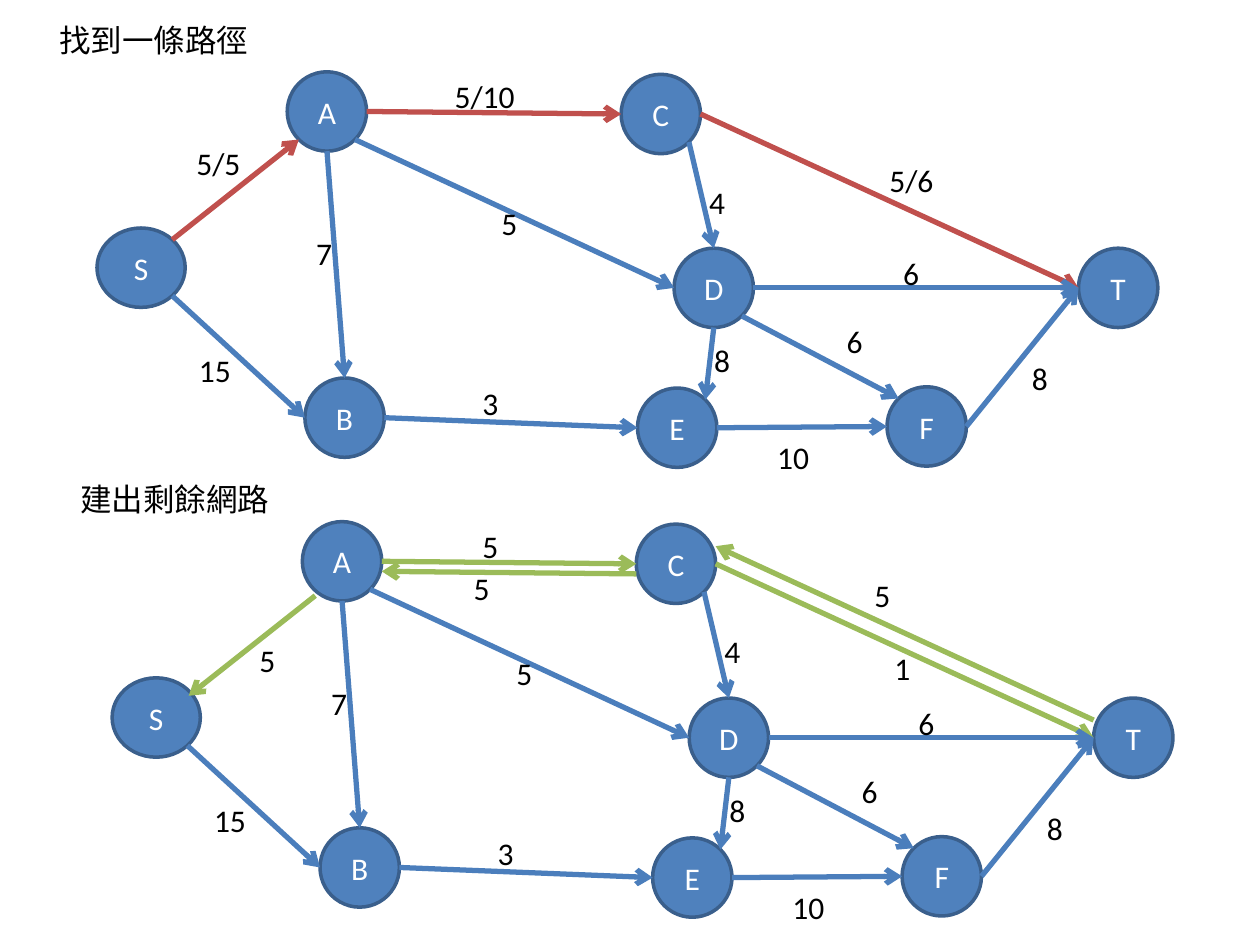
from math import sqrt
from typing import NamedTuple

from lxml.etree import SubElement
from pptx import Presentation
from pptx.dml.color import RGBColor
from pptx.enum.shapes import MSO_CONNECTOR as Connector, MSO_SHAPE as Shape
from pptx.enum.text import MSO_ANCHOR as Anchor, MSO_AUTO_SIZE as AutoSize, PP_ALIGN as Align
from pptx.oxml.ns import qn
from pptx.util import Inches, Pt

BLUE, RED, GREEN = "4B7EBC", "C0504D", "9BBB59"
LATIN, CHINESE = "Calibri", "Noto Sans CJK SC"
NODE_SIZE = 0.63
DIAGONAL = sqrt(0.5)
SIDES = {
    "top": (0, -1), "bottom": (0, 1), "left": (-1, 0), "right": (1, 0),
    "top right": (DIAGONAL, -DIAGONAL), "top left": (-DIAGONAL, -DIAGONAL),
    "bottom right": (DIAGONAL, DIAGONAL), "bottom left": (-DIAGONAL, DIAGONAL),
}


class Node(NamedTuple):
    left: float
    top: float
    width: float = NODE_SIZE

    def port(self, side):
        across, down = SIDES[side]
        return (self.left + self.width / 2 * (1 + across),
                self.top + NODE_SIZE / 2 * (1 + down))


class Edge(NamedTuple):
    start: str
    start_side: str
    end: str
    end_side: str
    label: str
    label_at: tuple
    color: str = BLUE
    shift: tuple = (0, 0)


NODES = {
    "A": Node(1.51, 0), "C": Node(4.16, 0.02), "B": Node(1.65, 2.43),
    "E": Node(4.29, 2.51), "F": Node(6.27, 2.5), "D": Node(4.58, 1.4),
    "S": Node(0, 1.24, 0.7), "T": Node(7.79, 1.4),
}
SHARED_EDGES = [
    Edge("A", "bottom", "B", "top", "7", (1.64, 1.24)),
    Edge("B", "right", "E", "left", "3", (2.96, 2.43)),
    Edge("C", "bottom right", "D", "top", "4", (4.76, 0.83)),
    Edge("D", "bottom", "E", "top right", "8", (4.8, 2.09)),
    Edge("D", "bottom right", "F", "top left", "6", (5.85, 1.94)),
    Edge("A", "bottom right", "D", "left", "5", (3.11, 1)),
    Edge("S", "bottom right", "B", "left", "15", (0.71, 2.17)),
    Edge("E", "right", "F", "left", "10", (5.3, 2.86)),
    Edge("D", "right", "T", "left", "6", (6.3, 1.4)),
    Edge("F", "right", "T", "left", "8", (7.32, 2.23)),
]
PATH_EDGES = [
    Edge("A", "right", "C", "left", "5/10", (2.74, -0.01), RED),
    Edge("S", "top right", "A", "bottom left", "5/5", (0.69, 0.52), RED),
    Edge("C", "right", "T", "left", "5/6", (6.19, 0.66), RED),
]
RESIDUAL_EDGES = [
    Edge("A", "right", "C", "left", "5", (2.84, -0.01), GREEN),
    Edge("C", "left", "A", "right", "5", (2.77, 0.33), GREEN, (0, 0.08)),
    Edge("A", "bottom left", "S", "top right", "5", (1.07, 0.9), GREEN, (0.01, 0.05)),
    Edge("C", "right", "T", "left", "1", (6.11, 0.96), GREEN),
    Edge("T", "left", "C", "right", "5", (5.95, 0.38), GREEN, (0, -0.14)),
]


def rgb(color):
    return RGBColor.from_string(color)


def write(frame, text, color, font=LATIN):
    frame.text = text
    span = frame.paragraphs[0].runs[0]
    span.font.size = Pt(18)
    span.font.name = font
    span.font.color.rgb = rgb(color)
    SubElement(span.font._element, qn("a:ea")).set("typeface", font)


def add_text(shapes, text, left, top, width, font=LATIN):
    box = shapes.add_textbox(Inches(left), Inches(top), Inches(width), Inches(0.4))
    box.text_frame.word_wrap = False
    box.text_frame.auto_size = AutoSize.SHAPE_TO_FIT_TEXT
    write(box.text_frame, text, "000000", font)


def add_node(shapes, name, node, left, top):
    circle = shapes.add_shape(Shape.OVAL, Inches(left + node.left), Inches(top + node.top),
                              Inches(node.width), Inches(NODE_SIZE))
    circle.shadow.inherit = False
    circle.fill.solid()
    circle.fill.fore_color.rgb = rgb("4F81BD")
    circle.line.color.rgb = rgb("3A5F8C")
    circle.line.width = Pt(2)
    circle.text_frame.vertical_anchor = Anchor.MIDDLE
    write(circle.text_frame, name, "FFFFFF")
    circle.text_frame.paragraphs[0].alignment = Align.CENTER


def add_edge(shapes, edge, left, top):
    ends = (NODES[edge.start].port(edge.start_side), NODES[edge.end].port(edge.end_side))
    points = [Inches(value) for x, y in ends
              for value in (left + x + edge.shift[0], top + y + edge.shift[1])]
    arrow = shapes.add_connector(Connector.STRAIGHT, *points)
    arrow.line.color.rgb = rgb(edge.color)
    arrow.line.width = Pt(3)
    SubElement(arrow.line._get_or_add_ln(), qn("a:tailEnd")).set("type", "arrow")
    SubElement(arrow._element.spPr, qn("a:effectLst"))


def add_network(page, left, top, edges):
    shapes = page.shapes.add_group_shape().shapes
    for name, node in NODES.items():
        add_node(shapes, name, node, left, top)
    for edge in edges:
        add_edge(shapes, edge, left, top)
    for edge in edges:
        x, y = edge.label_at
        add_text(shapes, edge.label, left + x, top + y, 0.22 + 0.115 * len(edge.label))


def main():
    deck = Presentation()
    deck.slide_width, deck.slide_height = Inches(10), Inches(7.5)
    page = deck.slides.add_slide(deck.slide_layouts[6])
    add_network(page, 0.77, 0.57, PATH_EDGES + SHARED_EDGES)
    add_network(page, 0.89, 4.14, RESIDUAL_EDGES + SHARED_EDGES)
    add_text(page.shapes, "找到一條路徑", 0.37, 0.12, 1.72, CHINESE)
    add_text(page.shapes, "建出剩餘網路", 0.54, 3.76, 1.72, CHINESE)
    deck.save("out.pptx")


if __name__ == "__main__":
    main()
